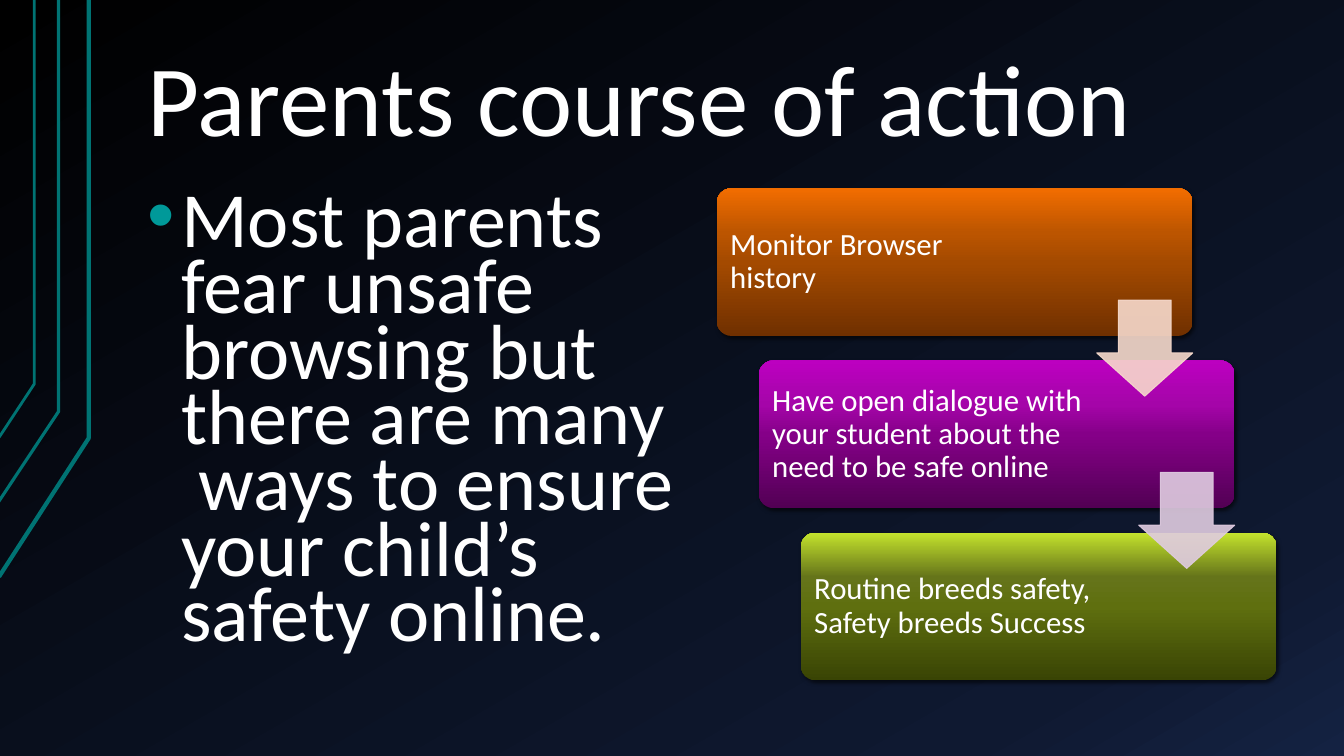
"""Build the slide on the course of action for parents."""
from lxml.etree import SubElement
from pptx import Presentation
from pptx.dml.color import RGBColor
from pptx.enum.shapes import MSO_SHAPE as Shape
from pptx.enum.text import MSO_ANCHOR as Anchor
from pptx.oxml.ns import qn
from pptx.util import Pt

hex_color = RGBColor.from_string


def set_gradient(fill, element, stops, angle):
    fill.gradient()
    fill.gradient_angle = angle
    stop_list = element.find(".//" + qn("a:gsLst"))
    for stop in list(stop_list):
        stop_list.remove(stop)
    for position, color in stops:
        stop = SubElement(stop_list, qn("a:gs"), pos=str(position * 1000))
        SubElement(stop, qn("a:srgbClr"), val=color)


def add_text(text, left, top, width, height, size, spacing, anchor, insets):
    box = slide.shapes.add_textbox(Pt(left), Pt(top), Pt(width), Pt(height))
    frame = box.text_frame
    frame.word_wrap = True
    frame.vertical_anchor = anchor
    frame.margin_left = frame.margin_right = Pt(insets[0])
    frame.margin_top = frame.margin_bottom = Pt(insets[1])
    frame.text = text
    para = frame.paragraphs[0]
    para.line_spacing = spacing
    font = para.runs[0].font
    font.name = "Calibri"
    font.size = Pt(size)
    font.color.rgb = hex_color("FFFFFF")
    return para


deck = Presentation()
deck.slide_width, deck.slide_height = Pt(960), Pt(540)
slide = deck.slides.add_slide(deck.slide_layouts[6])
set_gradient(slide.background.fill, slide._element,
             [(0, "000000"), (85, "0F1931"), (100, "142242")], 300)

for start_x, start_y, bend_x, bend_y, weight in [
    (-0.7, 412, 63.4, 313, 3),
    (-1.4, 359, 41.8, 294, 2.25),
    (-0.7, 312.5, 24.5, 274.3, 2),
]:
    builder = slide.shapes.build_freeform(Pt(start_x), Pt(start_y))
    builder.add_line_segments([(Pt(bend_x), Pt(bend_y)), (Pt(bend_x), 0)], close=False)
    stripe = builder.convert_to_shape()
    stripe.shadow.inherit = False
    stripe.fill.background()
    stripe.line.color.rgb = hex_color("007373")
    stripe.line.width = Pt(weight)

add_text("Parents course of action", 96, 21.6, 816, 96.5, 72, 0.9, Anchor.BOTTOM, (9.4, 5))

body = add_text("Most parents fear unsafe browsing but there are many  ways to ensure "
                "your child’s safety online.",
                96, 134.6, 399.6, 351.4, 55.8, 0.7, Anchor.TOP, (9.4, 5))
body.space_before = Pt(16)
properties = body._p.get_or_add_pPr()
properties.set("marL", str(Pt(24)))
properties.set("indent", str(Pt(-24)))
bullet_color = SubElement(properties, qn("a:buClr"))
SubElement(bullet_color, qn("a:srgbClr"), val="009999")
SubElement(properties, qn("a:buFont"), typeface="Arial")
SubElement(properties, qn("a:buChar"), char="•")

step_x, step_y = 30, 123
steps = [
    ("Monitor Browser history", 226, ["703000", "A44A00", "BC5500", "F26D00"]),
    ("Have open dialogue with your student about the need to be safe online", 235.5,
     ["520054", "850088", "A505A9", "BC00C0"]),
    ("Routine breeds safety, Safety breeds Success", 235.5,
     ["394404", "5F6F0F", "65741A", "C4E32D"]),
]
for index, (text, text_width, colors) in enumerate(steps):
    left, top = 512 + index * step_x, 134.5 + index * step_y
    card = slide.shapes.add_shape(Shape.ROUNDED_RECTANGLE, Pt(left), Pt(top), Pt(340), Pt(105.5))
    card.adjustments[0] = 0.1
    set_gradient(card.fill, card._element, zip([0, 50, 70, 100], colors), 90)
    card.line.fill.background()
    card.shadow.inherit = False
    effects = card._element.spPr.find(qn("a:effectLst"))
    shadow = SubElement(effects, qn("a:outerShdw"), blurRad=str(Pt(3)), dist=str(Pt(2)),
                        dir="2700000", algn="br", rotWithShape="0")
    shadow_color = SubElement(shadow, qn("a:srgbClr"), val="000000")
    SubElement(shadow_color, qn("a:alpha"), val="60000")
    add_text(text, left + 3, top + 3, text_width, 99.5, 22, 0.9, Anchor.MIDDLE, (6.6, 6.6))

for index, color in enumerate(["F7DACC", "E0CCE1"]):
    arrow = slide.shapes.add_shape(Shape.DOWN_ARROW, Pt(783.4 + index * step_x),
                                   Pt(214.4 + index * step_y), Pt(68.6), Pt(68.6))
    arrow.adjustments[0], arrow.adjustments[1] = 0.55, 0.45
    arrow.shadow.inherit = False
    arrow.fill.solid()
    arrow.fill.fore_color.rgb = hex_color(color)
    arrow.line.color.rgb = hex_color(color)
    arrow.line.width = Pt(0.75)
    for tint in arrow._element.spPr.iter(qn("a:srgbClr")):
        SubElement(tint, qn("a:alpha"), val="90000")

deck.save("out.pptx")
